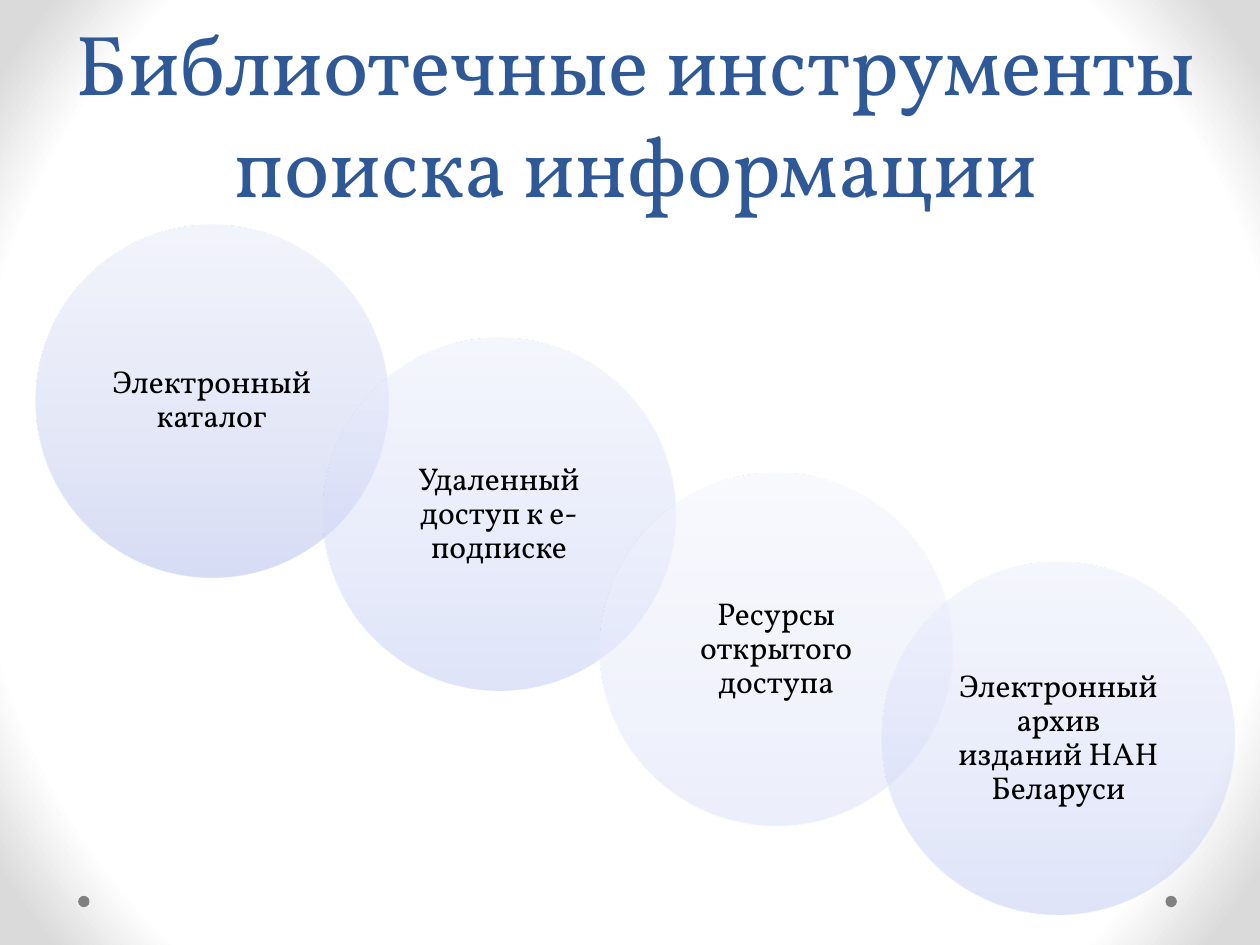
from pptx import Presentation
from pptx.dml.color import RGBColor
from pptx.enum.shapes import MSO_SHAPE
from pptx.enum.text import MSO_ANCHOR, MSO_AUTO_SIZE, PP_ALIGN
from pptx.oxml import parse_xml
from pptx.oxml.ns import nsdecls
from pptx.util import Inches, Pt

OVAL = MSO_SHAPE.OVAL
CENTER = PP_ALIGN.CENTER
MIDDLE, BOTTOM = MSO_ANCHOR.MIDDLE, MSO_ANCHOR.BOTTOM
NO_FIT = MSO_AUTO_SIZE.NONE

SIZE, LABEL = 2.8, 1.98
INSET = (SIZE - LABEL) / 2
DEEP = ("AFBBEC", "C7CFF0", "E9ECFA")
MID = ("BFCAF4", "D2D9F7", "EDF0FD")
PALE = ("DAE0FA", "E5E9FB", "F4F6FE")
TOOLS = [
    ("Электронный каталог", 0.28, 1.78, DEEP),
    ("Удаленный доступ к е-подписке", 2.56, 2.68, MID),
    ("Ресурсы открытого доступа", 4.76, 3.75, PALE),
    ("Электронный архив изданий НАН Беларуси", 7, 4.46, MID),
]


def color(code):
    return RGBColor.from_string(code)


def write(frame, text, size=18, ink="000000", font="Vollkorn",
          anchor=MIDDLE, space=0.9):
    frame.word_wrap = True
    frame.auto_size = NO_FIT
    frame.vertical_anchor = anchor
    para = frame.paragraphs[0]
    para.alignment = CENTER
    para.line_spacing = space
    run = para.add_run()
    run.text = text
    run.font.name = font
    run.font.size = Pt(size)
    run.font.color.rgb = color(ink)


def blend(stops, shade, alpha=100):
    marks = "".join(
        f'<a:gs pos="{pos * 1000}"><a:srgbClr val="{code}">'
        f'<a:alpha val="{alpha * 1000}"/></a:srgbClr></a:gs>'
        for pos, code in stops)
    return (f'<a:gradFill {nsdecls("a")} rotWithShape="1">'
            f'<a:gsLst>{marks}</a:gsLst>{shade}</a:gradFill>')


class Deck:
    def __init__(self):
        self.show = Presentation()
        self.show.slide_width = Inches(10)
        self.show.slide_height = Inches(7.5)
        self.slide = self.show.slides.add_slide(self.show.slide_layouts[5])

    def backdrop(self, stops):
        shade = ('<a:path path="circle"><a:fillToRect l="50000" t="50000" '
                 'r="50000" b="50000"/></a:path>')
        self.slide.element.cSld.insert(0, parse_xml(
            f'<p:bg {nsdecls("p", "a")}><p:bgPr>{blend(stops, shade)}'
            '<a:effectLst/></p:bgPr></p:bg>'))

    def title(self, text, left, top, width, height):
        box = self.slide.shapes.title
        box.left, box.top = Inches(left), Inches(top)
        box.width, box.height = Inches(width), Inches(height)
        write(box.text_frame, text, size=48.6, ink="2F5897",
              anchor=BOTTOM, space=Pt(58))

    def oval(self, left, top, size):
        shape = self.slide.shapes.add_shape(
            OVAL, Inches(left), Inches(top), Inches(size), Inches(size))
        shape.shadow.inherit = False
        shape.line.fill.background()
        return shape

    def dot(self, left, top, size, code):
        shape = self.oval(left, top, size)
        shape.fill.solid()
        shape.fill.fore_color.rgb = color(code)

    def disc(self, left, top, size, tones):
        shape = self.oval(left, top, size)
        fill = parse_xml(blend(zip((0, 35, 100), tones),
                               '<a:lin ang="16200000" scaled="0"/>', 50))
        shape.element.spPr.find(
            "{http://schemas.openxmlformats.org/drawingml/2006/main}prstGeom"
        ).addnext(fill)

    def label(self, text, left, top, size):
        box = self.slide.shapes.add_textbox(
            Inches(left), Inches(top), Inches(size), Inches(size))
        frame = box.text_frame
        frame.margin_left = frame.margin_right = Inches(0.15)
        frame.margin_top = frame.margin_bottom = Inches(0.03)
        write(frame, text)


def main():
    deck = Deck()
    deck.backdrop([(69, "FFFFFF"), (83, "FFFFFF"), (95, "DADADA")])
    for left in (9.25, 0.62):
        deck.dot(left, 7.11, 0.09, "808080")
    deck.title("Библиотечные инструменты поиска информации",
               0.28, 0, 9.53, 1.75)
    for text, left, top, tones in TOOLS:
        deck.disc(left, top, SIZE, tones)
        deck.label(text, left + INSET, top + INSET, LABEL)
    deck.show.save("out.pptx")


if __name__ == "__main__":
    main()
